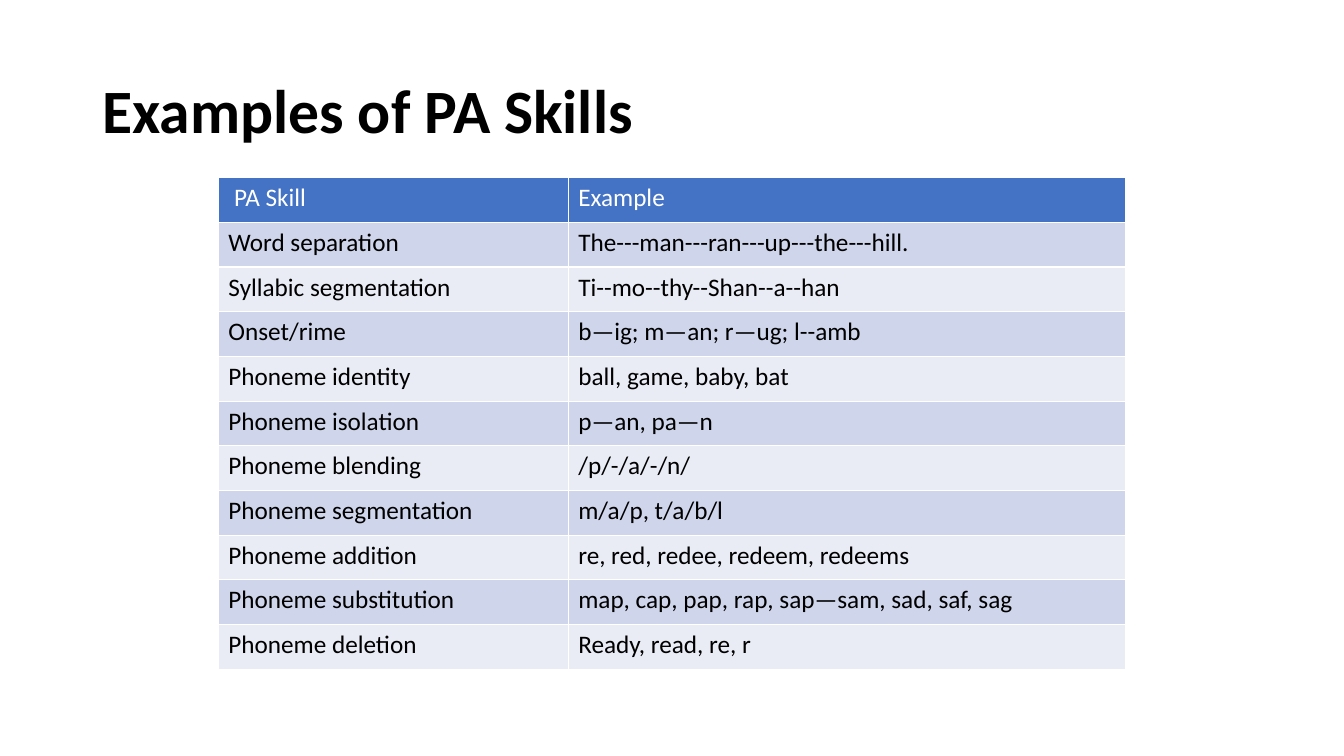
from pptx import Presentation
from pptx.dml.color import RGBColor
from pptx.enum.text import MSO_ANCHOR, MSO_AUTO_SIZE, PP_ALIGN
from pptx.util import Inches, Pt

LEFT = PP_ALIGN.LEFT
MIDDLE = MSO_ANCHOR.MIDDLE
NO_AUTOFIT = MSO_AUTO_SIZE.NONE

BLACK = RGBColor(0x00, 0x00, 0x00)
WHITE = RGBColor(0xFF, 0xFF, 0xFF)
HEADER_BLUE = RGBColor(0x44, 0x72, 0xC4)
BAND_DARK = RGBColor(0xCF, 0xD5, 0xEA)
BAND_LIGHT = RGBColor(0xE9, 0xEB, 0xF5)

GRID_COLUMNS, GRID_ROWS = 160, 90
TITLE_ONLY_LAYOUT = 5

SKILLS = [
    (" PA Skill", "Example"),
    ("Word separation", "The---man---ran---up---the---hill."),
    ("Syllabic segmentation", "Ti--mo--thy--Shan--a--han"),
    ("Onset/rime", "b—ig; m—an; r—ug; l--amb"),
    ("Phoneme identity", "ball, game, baby, bat"),
    ("Phoneme isolation", "p—an, pa—n"),
    ("Phoneme blending", "/p/-/a/-/n/"),
    ("Phoneme segmentation", "m/a/p, t/a/b/l"),
    ("Phoneme addition", "re, red, redee, redeem, redeems"),
    ("Phoneme substitution", "map, cap, pap, rap, sap—sam, sad, saf, sag"),
    ("Phoneme deletion", "Ready, read, re, r"),
]


class SlideBuilder:
    """Places styled elements on one slide, measured in grid columns and rows."""

    font_name = "Calibri"
    title_size = Pt(44)
    cell_size = Pt(18)

    def __init__(self, deck):
        self.page = deck.slides.add_slide(deck.slide_layouts[TITLE_ONLY_LAYOUT])
        self.column = deck.slide_width / GRID_COLUMNS
        self.row = deck.slide_height / GRID_ROWS

    def place(self, left, top, width, height):
        """Convert a grid rectangle to slide lengths."""
        return (round(left * self.column), round(top * self.row),
                round(width * self.column), round(height * self.row))

    def set_text(self, frame, text, size, color, bold=False):
        frame.text = text
        for span in frame.paragraphs[0].runs:
            span.font.name = self.font_name
            span.font.size = size
            span.font.bold = bold
            span.font.color.rgb = color

    def title(self, text, *area):
        box = self.page.shapes.title
        box.left, box.top, box.width, box.height = self.place(*area)
        frame = box.text_frame
        self.set_text(frame, text, self.title_size, BLACK, bold=True)
        frame.auto_size = NO_AUTOFIT
        frame.vertical_anchor = MIDDLE
        para = frame.paragraphs[0]
        para.alignment = LEFT
        para.line_spacing = 0.9

    def table(self, rows, column_widths, left, top, height):
        area = self.place(left, top, sum(column_widths), height)
        table = self.page.shapes.add_table(
            len(rows), len(column_widths), *area).table
        for column, width in zip(table.columns, column_widths):
            column.width = round(width * self.column)
        for index, texts in enumerate(rows):
            if index == 0:
                fill, color = HEADER_BLUE, WHITE
            else:
                fill, color = (BAND_DARK if index % 2 else BAND_LIGHT), BLACK
            for cell, text in zip(table.rows[index].cells, texts):
                cell.fill.solid()
                cell.fill.fore_color.rgb = fill
                self.set_text(cell.text_frame, text, self.cell_size, color)


def main():
    deck = Presentation()
    deck.slide_width, deck.slide_height = Inches(13.33), Inches(7.5)
    builder = SlideBuilder(deck)
    builder.title("Examples of PA Skills", 11, 4.8, 138, 17.4)
    builder.table(SKILLS, (41.65, 66.35), left=26, top=21.15, height=58.55)
    deck.save("out.pptx")


if __name__ == "__main__":
    main()
